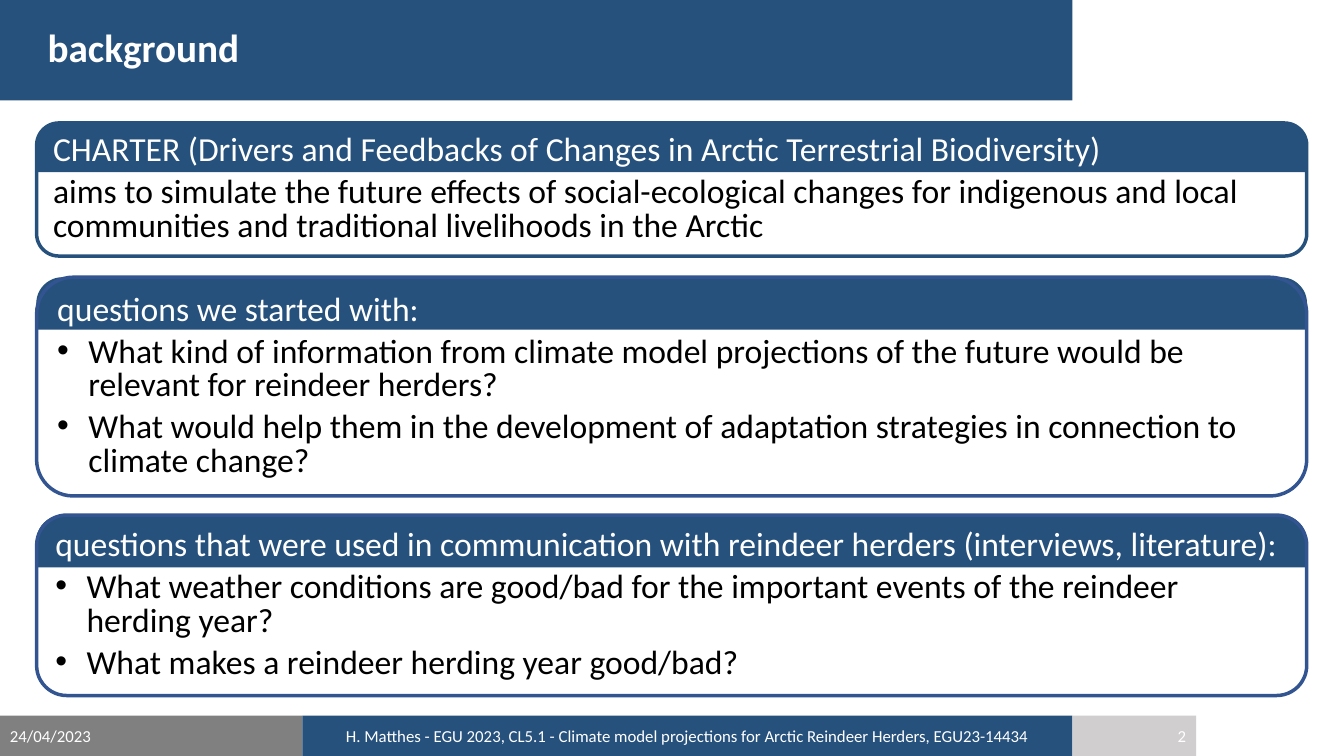
from lxml.etree import SubElement
from pptx import Presentation
from pptx.dml.color import RGBColor
from pptx.enum.shapes import MSO_SHAPE
from pptx.enum.text import MSO_ANCHOR, MSO_AUTO_SIZE, PP_ALIGN
from pptx.oxml.ns import qn
from pptx.util import Inches, Pt

NAVY, INDIGO, GREY, SILVER = "26517C", "325491", "808080", "D0CECE"
WHITE, BLACK = "FFFFFF", "000000"


def colour(code):
    return RGBColor.from_string(code)


class SlideBuilder:
    font = "Calibri"
    bullet_indent = Inches(0.31)

    def __init__(self, deck):
        self.deck = deck
        self.slide = deck.slides.add_slide(deck.slide_layouts[6])

    def place(self, left, top, width, height):
        across, down = self.deck.slide_width / 100, self.deck.slide_height / 100
        return [int(left * across), int(top * down), int(width * across), int(height * down)]

    def wording(self, paragraph, words, size, code, bold=False):
        paragraph.text = words
        for name, value in dict(name=self.font, size=Pt(size), bold=bold).items():
            setattr(paragraph.font, name, value)
        paragraph.font.color.rgb = colour(code)

    def shape(self, home, kind, area, fill=None, line=None):
        shape = home.add_shape(kind, *self.place(*area))
        shape.shadow.inherit = False
        if fill:
            shape.fill.solid()
            shape.fill.fore_color.rgb = colour(fill)
        else:
            shape.fill.background()
        if line:
            shape.line.color.rgb = colour(line)
            shape.line.width = Pt(2.5)
        else:
            shape.line.fill.background()
        return shape

    def bar(self, area, fill, words="", align=PP_ALIGN.LEFT):
        frame = self.shape(self.slide.shapes, MSO_SHAPE.RECTANGLE, area, fill).text_frame
        if words:
            frame.vertical_anchor = MSO_ANCHOR.MIDDLE
            frame.paragraphs[0].alignment = align
            self.wording(frame.paragraphs[0], words, 12, WHITE)

    def title(self, area, words):
        frame = self.slide.shapes.add_textbox(*self.place(*area)).text_frame
        frame.word_wrap = False
        frame.auto_size = MSO_AUTO_SIZE.SHAPE_TO_FIT_TEXT
        self.wording(frame.paragraphs[0], words, 28, WHITE, True)

    def bullet(self, paragraph):
        properties = paragraph._p.get_or_add_pPr()
        properties.set("marL", str(self.bullet_indent))
        properties.set("indent", str(-self.bullet_indent))
        SubElement(properties, qn("a:buFont")).set("typeface", "Arial")
        SubElement(properties, qn("a:buChar")).set("char", "•")

    def panel(self, top, height, band_height, line, heading, statements, bulleted=True):
        home = self.slide.shapes.add_group_shape().shapes
        band = self.shape(home, MSO_SHAPE.ROUND_2_SAME_RECTANGLE,
                          (2.7, top, 94.55, band_height), NAVY)
        band.adjustments[0], band.adjustments[1] = 0.5, 0
        frame = self.shape(home, MSO_SHAPE.ROUNDED_RECTANGLE,
                           (2.73, top, 94.5, height), line=line).text_frame
        frame.word_wrap = True
        frame.vertical_anchor = MSO_ANCHOR.MIDDLE
        frame.auto_size = MSO_AUTO_SIZE.SHAPE_TO_FIT_TEXT
        for position, words in enumerate([heading, *statements]):
            paragraph = frame.add_paragraph() if position else frame.paragraphs[0]
            if position and bulleted:
                self.bullet(paragraph)
            style = dict(alignment=PP_ALIGN.LEFT, line_spacing=Pt(24), space_after=Pt(6))
            for name, value in style.items():
                setattr(paragraph, name, value)
            self.wording(paragraph, words, 24, BLACK if position else WHITE)


def main():
    deck = Presentation()
    deck.slide_width, deck.slide_height = Inches(13.33), Inches(7.5)
    background = SlideBuilder(deck)

    background.bar((0, 0, 79.8, 13.3), NAVY)
    footer = [
        (22.5, GREY, "24/04/2023", PP_ALIGN.LEFT),
        (57.3, NAVY, "H. Matthes - EGU 2023, CL5.1 - Climate model projections for "
                     "Arctic Reindeer Herders, EGU23-14434", PP_ALIGN.CENTER),
        (9.2, SILVER, "2", PP_ALIGN.RIGHT),
    ]
    left = 0
    for width, fill, words, align in footer:
        background.bar((left, 94.67, width, 5.33), fill, words, align)
        left += width
    background.title((2.8, 2.4, 15.9, 7.6), "background")

    background.panel(
        16.27, 17.6, 6.5, NAVY,
        "CHARTER (Drivers and Feedbacks of Changes in Arctic Terrestrial Biodiversity)",
        ["aims to simulate the future effects of social-ecological changes for indigenous "
         "and local communities and traditional livelihoods in the Arctic"],
        bulleted=False)
    background.panel(
        36.67, 28.93, 6.93, INDIGO,
        "questions we started with:",
        ["What kind of information from climate model projections of the future would be "
         "relevant for reindeer herders?",
         "What would help them in the development of adaptation strategies in connection "
         "to climate change?"])
    background.panel(
        68.13, 23.87, 6.93, INDIGO,
        "questions that were used in communication with reindeer herders "
        "(interviews, literature):",
        ["What weather conditions are good/bad for the important events of the reindeer "
         "herding year?",
         "What makes a reindeer herding year good/bad?"])
    deck.save("out.pptx")


if __name__ == "__main__":
    main()
